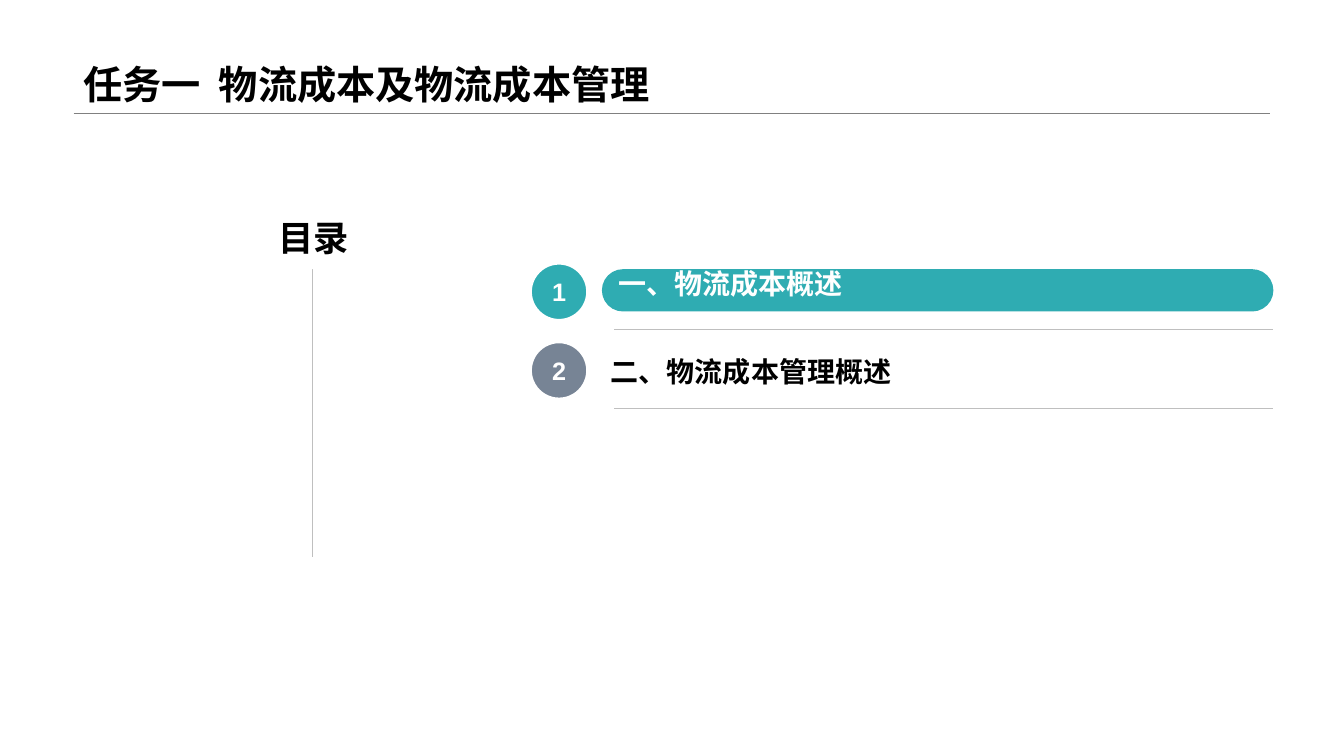
from dataclasses import dataclass
from lxml import etree
from pptx import Presentation
from pptx.dml.color import RGBColor
from pptx.enum.shapes import MSO_CONNECTOR, MSO_SHAPE
from pptx.enum.text import MSO_ANCHOR, MSO_AUTO_SIZE, PP_ALIGN
from pptx.oxml.ns import qn
from pptx.util import Pt

LINE = MSO_CONNECTOR.STRAIGHT
OVAL, RECT, PILL = MSO_SHAPE.OVAL, MSO_SHAPE.RECTANGLE, MSO_SHAPE.ROUNDED_RECTANGLE
TOP, MID, LOW = MSO_ANCHOR.TOP, MSO_ANCHOR.MIDDLE, MSO_ANCHOR.BOTTOM
LEFT, MIDST, RIGHT = PP_ALIGN.LEFT, PP_ALIGN.CENTER, PP_ALIGN.RIGHT
NOFIT = MSO_AUTO_SIZE.NONE
PX = 9144


@dataclass(frozen=True)
class Theme:
    font: str = "Arial"
    black: str = "000000"
    white: str = "FFFFFF"
    teal: str = "2FACB2"
    slate: str = "778495"
    dark: str = "808080"
    pale: str = "BFBFBF"
    title: float = 28
    head: float = 25.2
    item: float = 20
    num: float = 18


class Page:
    def __init__(self, deck, theme):
        self.theme = theme
        self.slide = deck.slides.add_slide(deck.slide_layouts[5])

    def label(self, shape, text, size, color, align=LEFT, anchor=LOW, space=1.0):
        frame = shape.text_frame
        frame.text = text
        frame.word_wrap = True
        frame.auto_size = NOFIT
        frame.vertical_anchor = anchor
        para = frame.paragraphs[0]
        para.alignment = align
        para.line_spacing = space
        para.font.name = self.theme.font
        para.font.size = Pt(size)
        para.font.bold = True
        para.font.color.rgb = RGBColor.from_string(color)

    def title(self, box, text):
        shape = self.slide.shapes.title
        shape.left, shape.top, shape.width, shape.height = (v * PX for v in box)
        self.label(shape, text, self.theme.title, self.theme.black, space=0.9)

    def line(self, x1, y1, x2, y2, color):
        rule = self.slide.shapes.add_connector(LINE, *(v * PX for v in (x1, y1, x2, y2)))
        rule.line.color.rgb = RGBColor.from_string(color)
        rule.line.width = Pt(0.25)
        etree.SubElement(rule._element.spPr, qn("a:effectLst"))

    def shape(self, kind, box, fill, edge=None):
        shape = self.slide.shapes.add_shape(kind, *(v * PX for v in box))
        shape.shadow.inherit = False
        shape.fill.solid()
        shape.fill.fore_color.rgb = RGBColor.from_string(fill)
        if edge:
            shape.line.color.rgb = RGBColor.from_string(edge)
            shape.line.width = Pt(2.25)
        else:
            shape.line.fill.background()
        return shape

    def badge(self, box, text, fill):
        disc = self.shape(OVAL, box, fill, self.theme.white)
        self.label(disc, text, self.theme.num, self.theme.white, MIDST, MID)

    def head(self, box, text):
        block = self.shape(RECT, box, self.theme.white)
        self.label(block, text, self.theme.head, self.theme.black, RIGHT, TOP)

    def pill(self, box, text):
        bar = self.shape(PILL, box, self.theme.teal)
        bar.adjustments[0] = 0.5
        self.label(bar, text, self.theme.item, self.theme.white, space=1.1)

    def text(self, box, text):
        area = self.slide.shapes.add_textbox(*(v * PX for v in box))
        self.label(area, text, self.theme.item, self.theme.black)


def main():
    deck = Presentation()
    deck.slide_width, deck.slide_height = 1333 * PX, 750 * PX
    theme = Theme()
    page = Page(deck, theme)
    page.line(73, 112, 1260, 112, theme.dark)
    page.title((73, 0, 1187, 112), "任务一  物流成本及物流成本管理")

    for row, fill in enumerate((theme.teal, theme.slate)):
        top = 261 + 78 * row
        page.badge((526, top, 57, 57), str(row + 1), fill)
        page.line(609, top + 66, 1263, top + 66, theme.pale)

    page.line(310, 215, 310, 553, theme.pale)
    page.head((165, 210, 191, 57), "目录")
    page.pill((597, 267, 666, 42), "一、物流成本概述")
    page.text((596, 348, 666, 42), "二、物流成本管理概述")
    deck.save("out.pptx")


if __name__ == "__main__":
    main()
